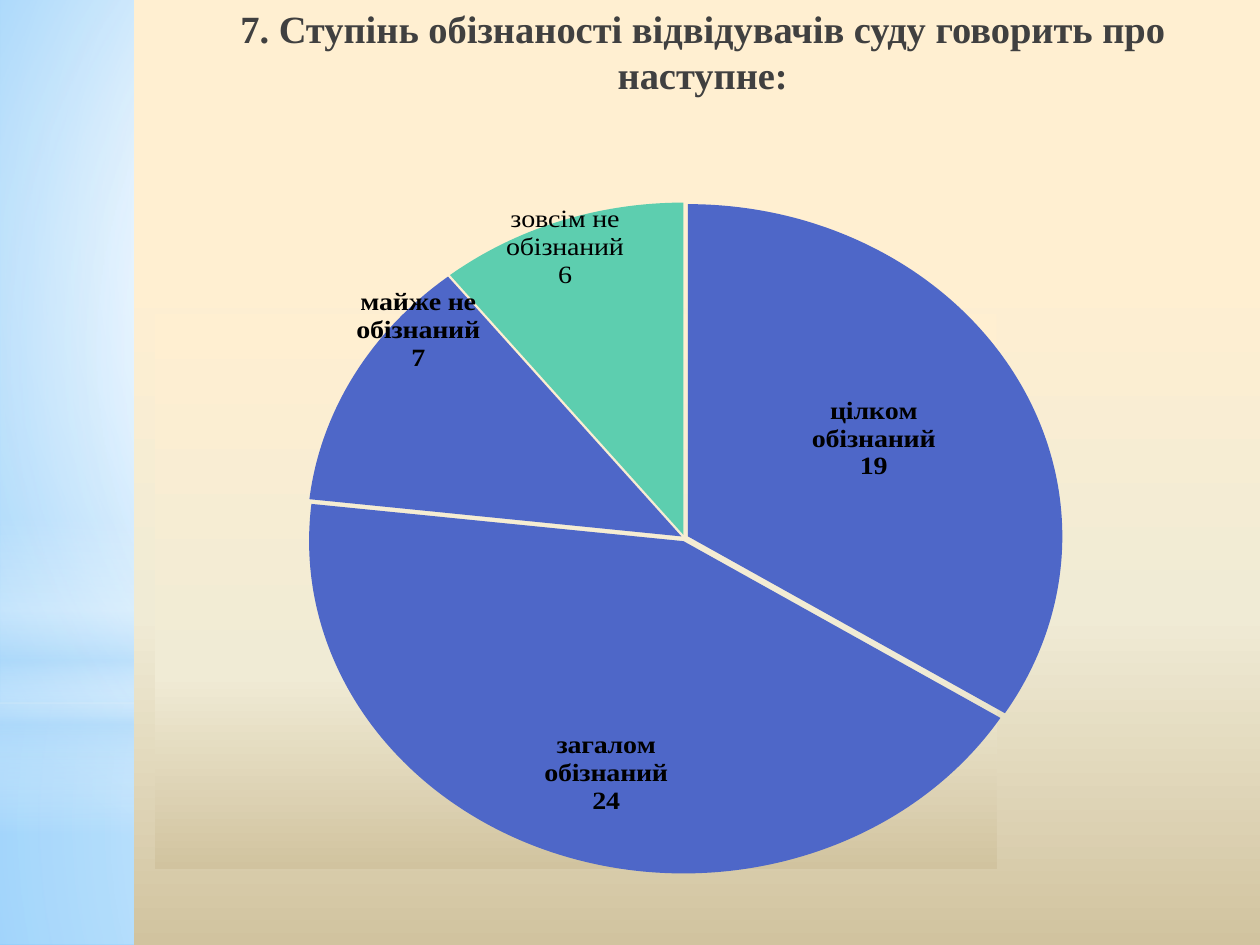
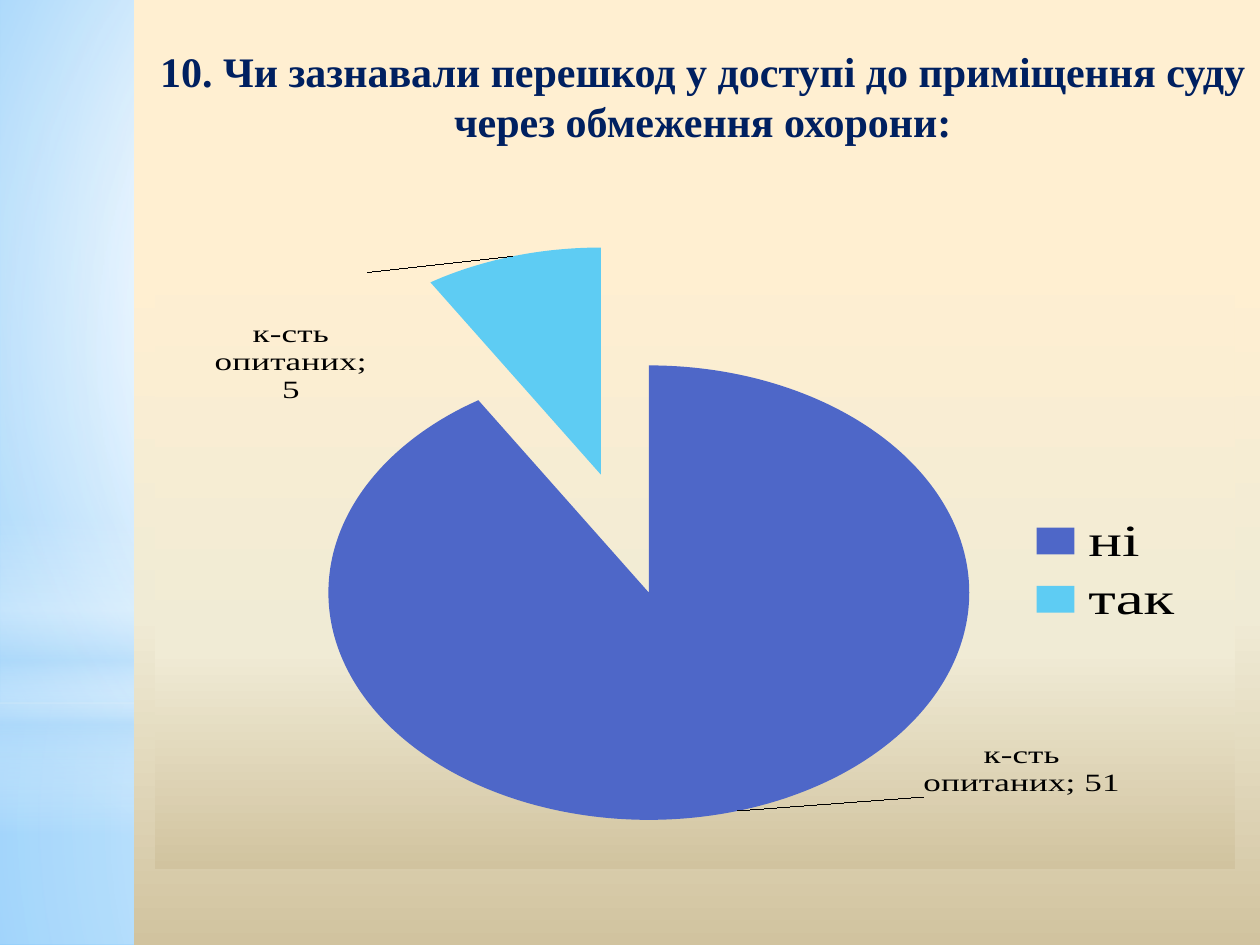
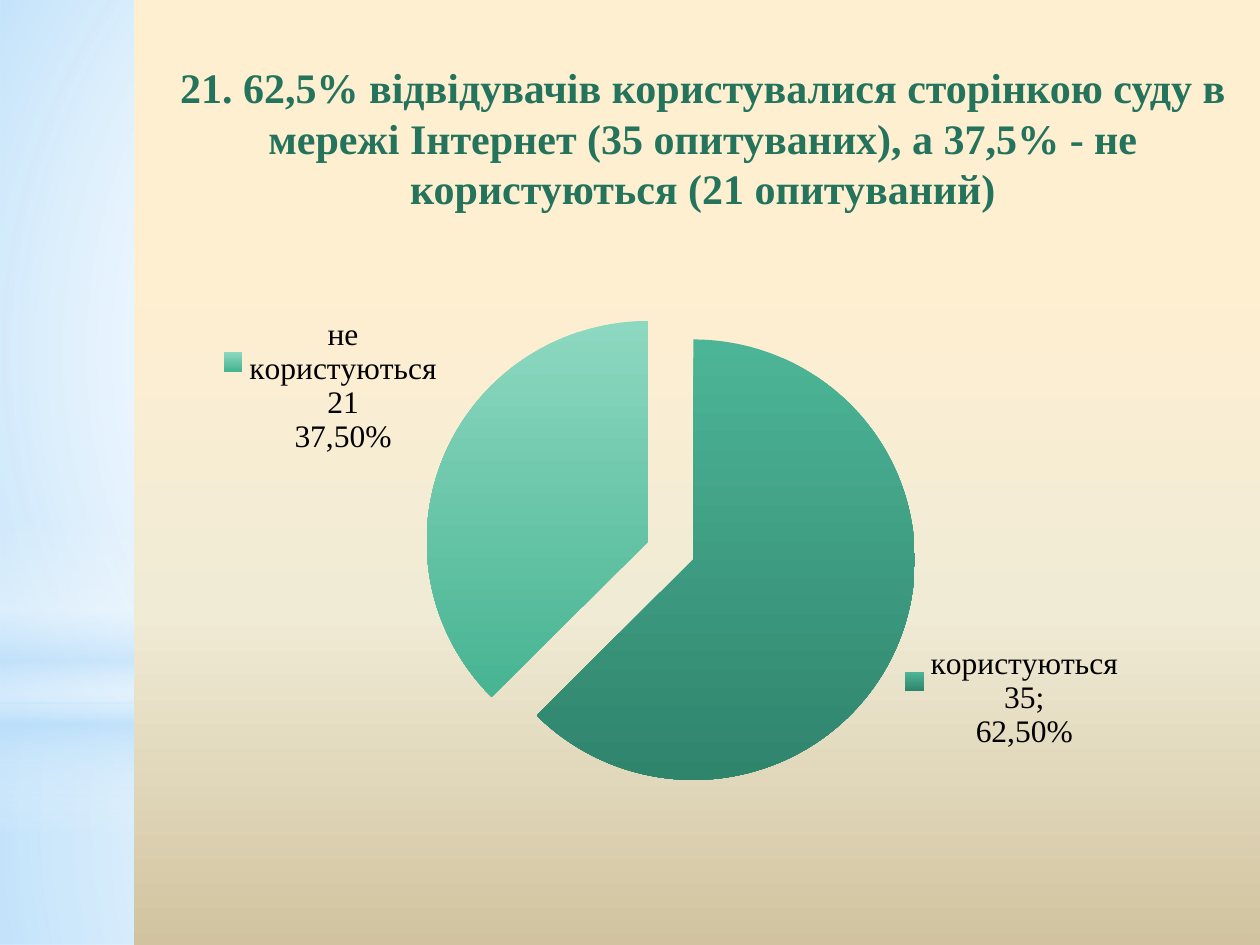
from dataclasses import dataclass

from lxml import etree
from pptx import Presentation
from pptx.chart.data import CategoryChartData
from pptx.dml.color import RGBColor
from pptx.enum.chart import XL_CHART_TYPE, XL_LABEL_POSITION, XL_LEGEND_POSITION
from pptx.enum.shapes import MSO_SHAPE
from pptx.enum.text import MSO_ANCHOR, PP_ALIGN
from pptx.oxml import parse_xml
from pptx.oxml.ns import nsdecls, qn
from pptx.util import Inches, Pt

PIE = XL_CHART_TYPE.PIE
OUTSIDE = XL_LABEL_POSITION.OUTSIDE_END
LEGEND_RIGHT = XL_LEGEND_POSITION.RIGHT
RECT, OVAL = MSO_SHAPE.RECTANGLE, MSO_SHAPE.OVAL
TOP, CENTER = MSO_ANCHOR.TOP, PP_ALIGN.CENTER
COLUMNS, ROWS, CELL = 100, 75, Inches(0.1)
CENTERED = (50, 50, 50, 50)


@dataclass(frozen=True)
class Theme:
    """Colours, gradients and type sizes of the deck."""

    serif: str = "Times New Roman"
    sans: str = "Lato"
    black: str = "000000"
    white: str = "FFFFFF"
    charcoal: str = "404040"
    navy: str = "002060"
    pine: str = "23735D"
    blue: str = "4E67C8"
    sky: str = "5ECCF3"
    mint: str = "5DCEAF"
    deep_green: tuple = ("4DB597", "2F846C")
    light_green: tuple = ("8DD8C0", "47B492")
    heading: int = 24
    heading_small: int = 22
    legend: int = 36
    label_large: int = 20
    label: int = 18
    label_small: int = 16
    backdrop: tuple = ((0, "9ED5FF"), (60, "FFFFFF"), (100, "5BB9FF"))
    floor: tuple = ((0, "FFFFFF", 91), (37, "FFFFFF", 76), (100, "B4DCFA", 79))
    sky_glow: tuple = ((0, "FFFFFF", 89), (48, "FFFFFF", 62), (100, "B4DCFA", 79))
    horizon: tuple = ((0, "FFFFFF", 0), (29, "FFFFFF", 30), (45, "B4DCFA", 40),
                      (55, "FFFFFF", 26), (65, "B4DCFA", 60), (100, "FFFFFF", 0))
    halo: tuple = ((0, "FFFFFF"), (56, "FFFFFF", 0))
    sand: tuple = ((28, "FFEFD1"), (65, "F0EBD5"), (100, "D1C39F"))
    sand_inset: tuple = ((0, "FFEFD1"), (65, "F0EBD5"), (100, "D1C39F"))


@dataclass(frozen=True)
class Slice:
    """One part of a pie with its fill, explosion and label."""

    category: str
    value: int
    fill: str | tuple
    explosion: int
    label: tuple
    shift: tuple = ()
    bold: bool = False


def gradient(stops, focus=None):
    """Return a gradient fill, circular around focus or else vertical."""
    marks = "".join(
        f'<a:gs pos="{position * 1000}"><a:srgbClr val="{color}">'
        f'<a:alpha val="{(alpha or [100])[0] * 1000}"/></a:srgbClr></a:gs>'
        for position, color, *alpha in stops)
    if focus:
        edges = " ".join(f'{side}="{share * 1000}"' for side, share in zip("ltrb", focus))
        direction = f'<a:path path="circle"><a:fillToRect {edges}/></a:path>'
    else:
        direction = '<a:lin ang="5400000" scaled="0"/>'
    return parse_xml(f'<a:gradFill {nsdecls("a")} rotWithShape="1">'
                     f'<a:gsLst>{marks}</a:gsLst>{direction}</a:gradFill>')


def setting(tag, value):
    """Return a chart element that holds one value."""
    element = etree.Element(qn(f"c:{tag}"))
    element.set("val", str(value))
    return element


def manual_layout(**settings):
    """Return a chart layout with the given settings."""
    layout = etree.Element(qn("c:layout"))
    manual = etree.SubElement(layout, qn("c:manualLayout"))
    manual.extend([setting(key, value) for key, value in settings.items()])
    return layout


def style_font(font, name, size, color, bold=False):
    """Set the face, size, colour and weight of a font."""
    font.name, font.size, font.bold = name, Pt(size), bold
    font.color.rgb = RGBColor.from_string(color)


class Deck:
    """Holds the theme and the current slide and draws each kind of element."""

    def __init__(self, theme):
        """Open an empty deck sized to the grid."""
        self.theme = theme
        self.presentation = Presentation()
        self.presentation.slide_width = COLUMNS * CELL
        self.presentation.slide_height = ROWS * CELL
        self.slide = None

    def cells(self, *counts):
        """Turn grid counts into lengths."""
        return [round(count * CELL) for count in counts]

    def panel(self, form, box, stops, focus=None):
        """Draw a shape with a gradient and no outline."""
        shape = self.slide.shapes.add_shape(form, *self.cells(*box))
        shape.shadow.inherit = False
        shape.line.fill.background()
        shape.fill.solid()
        solid = shape.element.spPr.find(qn("a:solidFill"))
        solid.getparent().replace(solid, gradient(stops, focus))
        return shape

    def start(self, tinted=True):
        """Add a slide with the sky scenery."""
        theme = self.theme
        self.slide = self.presentation.slides.add_slide(self.presentation.slide_layouts[6])
        fill = self.slide.background.fill
        fill.solid()
        fill.fore_color.rgb = RGBColor.from_string(theme.white)
        if tinted:
            solid = self.slide.element.find(f'.//{qn("p:bgPr")}/{qn("a:solidFill")}')
            solid.getparent().replace(solid, gradient(theme.backdrop, (20, 10, 20, 60)))
        self.panel(RECT, (0, 55.8, COLUMNS, 19.2), theme.floor, CENTERED)
        self.panel(RECT, (0, 0, COLUMNS, 55.8), theme.sky_glow, CENTERED)
        self.panel(RECT, (0, 41.2, COLUMNS, 25), theme.horizon)
        self.panel(OVAL, (0, 17.5, COLUMNS, 55.8), theme.halo, CENTERED)

    def heading(self, words, color, size, top):
        """Draw the sand panel that carries the heading."""
        sheet = self.panel(RECT, (10.64, 0, COLUMNS - 10.64, ROWS), self.theme.sand)
        frame = sheet.text_frame
        frame.word_wrap, frame.vertical_anchor = True, TOP
        frame.margin_left, frame.margin_right, frame.margin_top = self.cells(1.4, 0.5, top)
        paragraph = frame.paragraphs[0]
        paragraph.alignment = CENTER
        run = paragraph.add_run()
        run.text = words
        style_font(run.font, self.theme.serif, size, color, bold=True)

    def inset(self, top, width):
        """Draw the sand field behind a pie, down to a common bottom."""
        self.panel(RECT, (12.3, top, width, 69 - top), self.theme.sand_inset)

    def pie(self, box, plot_box, slices, label_size, series_name="Series 1",
            legend=False, keys=False):
        """Draw a pie whose plot box is given in shares of the chart."""
        theme = self.theme
        data = CategoryChartData()
        data.categories = [part.category for part in slices]
        data.add_series(series_name, [part.value for part in slices])
        chart = self.slide.shapes.add_chart(PIE, *self.cells(*box), data).chart
        chart.has_title = False
        style_font(chart.font, theme.sans, theme.label, theme.black)
        chart.has_legend = legend
        if legend:
            chart.legend.position = LEGEND_RIGHT
            chart.legend.include_in_layout = False
            style_font(chart.legend.font, theme.serif, theme.legend, theme.black)

        plot = chart.plots[0]
        plot.vary_by_categories = True
        area = chart.element.find(f'.//{qn("c:plotArea")}')
        for layout in area.findall(qn("c:layout")):
            area.remove(layout)
        area.insert(0, manual_layout(layoutTarget="inner", xMode="edge", yMode="edge",
                                     **dict(zip("xywh", plot_box))))

        series = plot.series[0]
        labels = series.data_labels
        labels.show_value, labels.show_legend_key, labels.position = True, keys, OUTSIDE
        style_font(labels.font, theme.serif, label_size, theme.black)
        for index, part in enumerate(slices):
            self.slice_fill(series.points[index], part)
            self.slice_label(series.points[index], part, label_size)
        label_group = chart.element.find(f'.//{qn("c:ser")}/{qn("c:dLbls")}')
        for leaders in label_group.findall(qn("c:showLeaderLines")):
            label_group.remove(leaders)
        label_group.append(setting("showLeaderLines", int(legend)))
        for part, entry in zip(slices, label_group.findall(qn("c:dLbl"))):
            entry.find(qn("c:showLegendKey")).set("val", str(int(keys)))
            if part.shift:
                entry.find(qn("c:idx")).addnext(manual_layout(**dict(zip("xy", part.shift))))
        for part, point in zip(slices, chart.element.iter(qn("c:dPt"))):
            point.find(qn("c:spPr")).addprevious(setting("explosion", part.explosion))

    def slice_fill(self, point, part):
        """Fill a slice with one colour or a downward blend."""
        fill = point.format.fill
        point.format.line.fill.background()
        if isinstance(part.fill, str):
            fill.solid()
            fill.fore_color.rgb = RGBColor.from_string(part.fill)
            return
        fill.gradient()
        fill.gradient_angle = 270
        for stop, color in zip(fill.gradient_stops, part.fill):
            stop.color.rgb = RGBColor.from_string(color)

    def slice_label(self, point, part, size):
        """Write the lines of a slice's label."""
        frame = point.data_label.text_frame
        for number, line in enumerate(part.label):
            paragraph = frame.add_paragraph() if number else frame.paragraphs[0]
            run = paragraph.add_run()
            run.text = line
            style_font(run.font, self.theme.serif, size, self.theme.black, part.bold)
        point.data_label.position = OUTSIDE


def main():
    """Build and save the three survey slides."""
    theme = Theme()
    deck = Deck(theme)

    deck.start()
    deck.heading("7. Ступінь обізнаності відвідувачів суду говорить про наступне:",
                 theme.charcoal, theme.heading_small, top=0.4)
    deck.inset(top=24.9, width=66.8)
    awareness = [
        ("цілком обізнаний", 19, theme.blue, (-0.19, 0.15), True),
        ("загалом обізнаний", 24, theme.blue, (0.1, -0.18), True),
        ("майже не обізнаний", 7, theme.blue, (0.12, 0), True),
        ("зовсім не обізнаний", 6, theme.mint, (0.06, 0.09), False),
    ]
    deck.pie((12.2, 10.4, 87.8, 64.6), (0.03, 0, 0.9, 0.92), [
        Slice(level, count, fill, 1, (level, str(count)), shift, bold)
        for level, count, fill, shift, bold in awareness
    ], theme.label_small)

    deck.start()
    deck.heading("10. Чи зазнавали перешкод у доступі до приміщення суду "
                 "через обмеження охорони:", theme.navy, theme.heading, top=3.6)
    deck.inset(top=19.4, width=85.7)
    deck.pie((14.6, 13.3, 81.1, 55.9), (0, 0.09, 0.91, 0.91), [
        Slice("ні", 51, theme.blue, 0, ("к-сть опитаних; 51",), (0.18, -0.15)),
        Slice("так", 5, theme.sky, 54, ("к-сть опитаних;", "5"), (-0.14, 0.21)),
    ], theme.label_large, series_name="к-сть опитаних", legend=True)

    deck.start(tinted=False)
    deck.heading("21. 62,5% відвідувачів користувалися сторінкою суду в мережі Інтернет "
                 "(35 опитуваних), а 37,5% - не користуються (21 опитуваний)",
                 theme.pine, theme.heading, top=4.9)
    deck.pie((14.6, 21, 81.9, 40.9), (0.02, 0.11, 0.86, 0.86), [
        Slice("користуються", 35, theme.deep_green, 22, ("користуються 35;", "62,50%")),
        Slice("не користуються", 21, theme.light_green, 0, ("не користуються 21", "37,50%")),
    ], theme.label, keys=True)

    deck.presentation.save("out.pptx")


if __name__ == "__main__":
    main()
